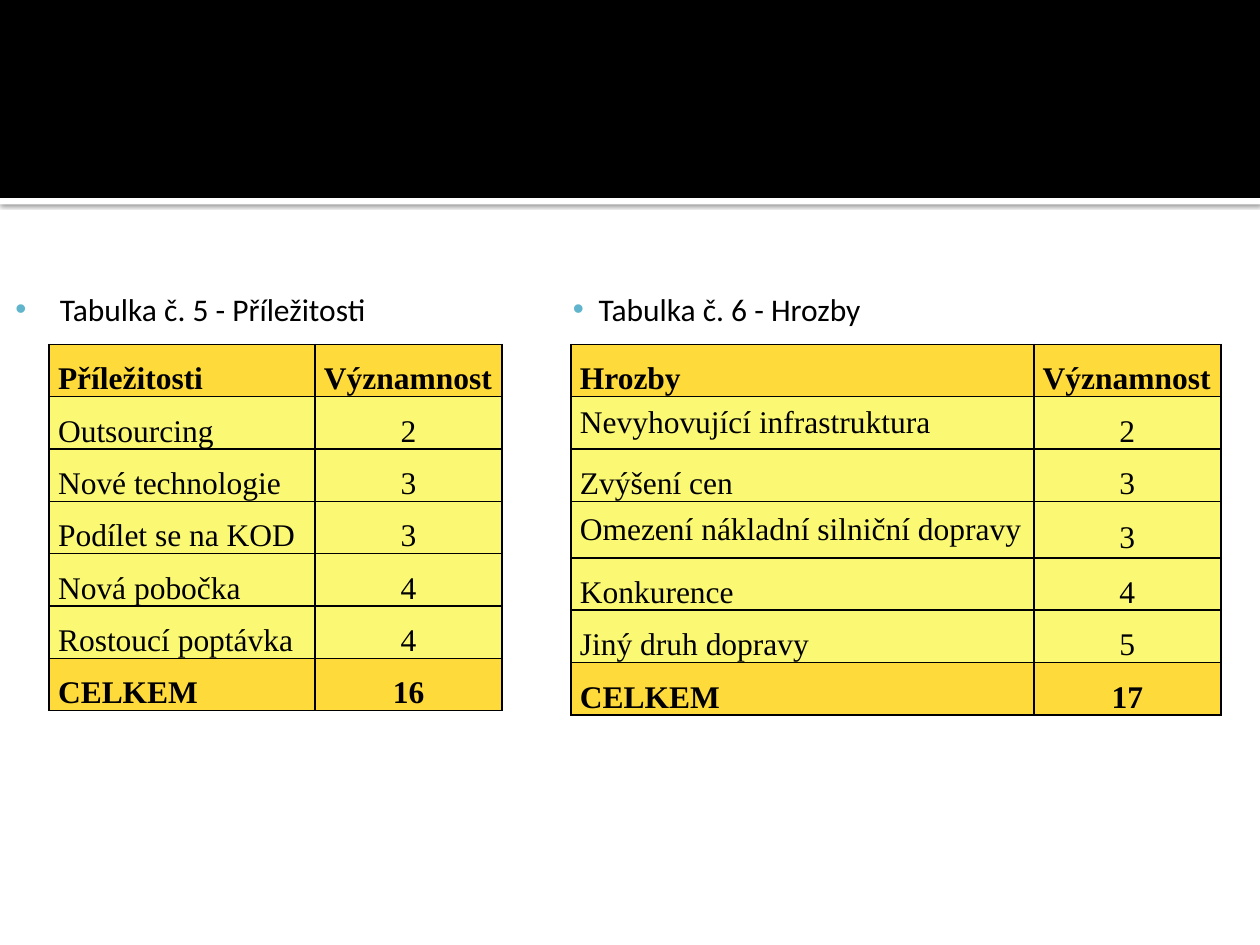
from lxml import etree
from pptx import Presentation
from pptx import util as u
from pptx.dml.color import RGBColor
from pptx.enum import shapes, text
from pptx.oxml import parse_xml
from pptx.oxml.ns import nsdecls, qn

BLACK = RGBColor(0, 0, 0)
WHITE = RGBColor(255, 255, 255)
GOLD = RGBColor(0xFF, 0xDA, 0x3B)
LEMON = RGBColor(0xFB, 0xF8, 0x74)
TEAL = RGBColor(0x60, 0xB5, 0xCC)
BODY = {"name": "Calibri", "size": u.Pt(18)}
CELL = {"name": "Times New Roman", "size": u.Pt(18)}
INSET = {
    "margin_left": u.Cm(0.18),
    "margin_right": u.Cm(0.18),
    "margin_top": 0,
    "margin_bottom": 0,
    "vertical_anchor": text.MSO_ANCHOR.MIDDLE,
}
GAINS = [
    ("Příležitosti", "Významnost"),
    ("Outsourcing", "2"),
    ("Nové technologie", "3"),
    ("Podílet se na KOD", "3"),
    ("Nová pobočka", "4"),
    ("Rostoucí poptávka", "4"),
    ("CELKEM", "16"),
]
RISKS = [
    ("Hrozby", "Významnost"),
    ("Nevyhovující infrastruktura", "2"),
    ("Zvýšení cen", "3"),
    ("Omezení nákladní silniční dopravy", "3"),
    ("Konkurence", "4"),
    ("Jiný druh dopravy", "5"),
    ("CELKEM", "17"),
]


class Deck:
    """Hold the style and the current slide, and draw each kind of element."""

    def __init__(self):
        self.prs = Presentation()
        self.prs.slide_width, self.prs.slide_height = u.Cm(25.4), u.Cm(19.05)
        self.slide = self.prs.slides.add_slide(self.prs.slide_layouts[6])

    def style(self, item, look):
        for key, value in look.items():
            setattr(item, key, value)

    def band(self, top, height, color):
        box = self.slide.shapes.add_shape(
            shapes.MSO_SHAPE.RECTANGLE, 0, u.Cm(top), u.Cm(25.4), u.Cm(height))
        box.shadow.inherit = False
        box.fill.solid()
        box.fill.fore_color.rgb = color
        box.line.fill.background()
        return box

    def shade(self, box):
        glow = box._element.spPr.find(qn("a:effectLst"))
        glow.append(parse_xml(
            f'<a:outerShdw {nsdecls("a")} blurRad="{u.Pt(2.5)}" '
            f'dist="{u.Pt(0.8)}" dir="5400000" rotWithShape="0">'
            f'<a:srgbClr val="{BLACK}"><a:alpha val="60000"/></a:srgbClr>'
            '</a:outerShdw>'))

    def label(self, words, left, width, margin, hang):
        box = self.slide.shapes.add_textbox(
            u.Cm(left), u.Cm(5.72), u.Cm(width), u.Cm(1.02))
        box.text_frame.word_wrap = True
        par = box.text_frame.paragraphs[0]
        par.text = words
        props = par._p.get_or_add_pPr()
        props.set("marL", str(u.Cm(margin)))
        props.set("indent", str(-u.Cm(hang)))
        tint = etree.SubElement(props, qn("a:buClr"))
        etree.SubElement(tint, qn("a:srgbClr"), val=str(TEAL))
        etree.SubElement(props, qn("a:buFont"), typeface="Arial")
        etree.SubElement(props, qn("a:buChar"), char="•")
        font = par.runs[0].font
        self.style(font, BODY)
        font.color.rgb = BLACK

    def edge(self, cell):
        props = cell._tc.get_or_add_tcPr()
        for side in ("lnL", "lnR", "lnT", "lnB"):
            line = etree.SubElement(props, qn(f"a:{side}"), w=str(u.Pt(1)))
            fill = etree.SubElement(line, qn("a:solidFill"))
            etree.SubElement(fill, qn("a:srgbClr"), val=str(BLACK))

    def cell(self, cell, words, strong, center, space):
        self.edge(cell)
        self.style(cell, INSET)
        cell.fill.solid()
        cell.fill.fore_color.rgb = GOLD if strong else LEMON
        par = cell.text_frame.paragraphs[0]
        par.text = words
        par.line_spacing = space
        par.alignment = text.PP_ALIGN.CENTER if center else text.PP_ALIGN.LEFT
        font = par.runs[0].font
        self.style(font, CELL | {"bold": strong})
        font.color.rgb = BLACK

    def table(self, rows, left, widths, tight=(), tall=()):
        frame = self.slide.shapes.add_table(
            len(rows), len(widths), u.Cm(left), u.Cm(6.94),
            u.Cm(sum(widths)), u.Cm(8))
        grid = frame.table
        for col, width in zip(grid.columns, widths):
            col.width = u.Cm(width)
        for r, row in enumerate(rows):
            grid.rows[r].height = u.Cm(1.14 if r in tall else 0.66)
            for c, words in enumerate(row):
                space = 1.0 if c == 0 and r in tight else 1.5
                strong = r in (0, len(rows) - 1)
                self.cell(grid.cell(r, c), words, strong, c and r, space)
        frame.height = u.Cm(8)


def main():
    deck = Deck()
    deck.shade(deck.band(3.99, 0.13, WHITE))
    deck.band(0, 3.99, BLACK)
    deck.table(GAINS, 0.99, (5.36, 3.77))
    deck.table(RISKS, 11.51, (9.33, 3.77), tight=(1, 3), tall=(3,))
    deck.label("Tabulka č. 5 - Příležitosti", -0.58, 9, 1.54, 0.9)
    deck.label("Tabulka č. 6 - Hrozby", 11.3, 6.45, 0.52, 0.52)
    deck.prs.save("out.pptx")


if __name__ == "__main__":
    main()
